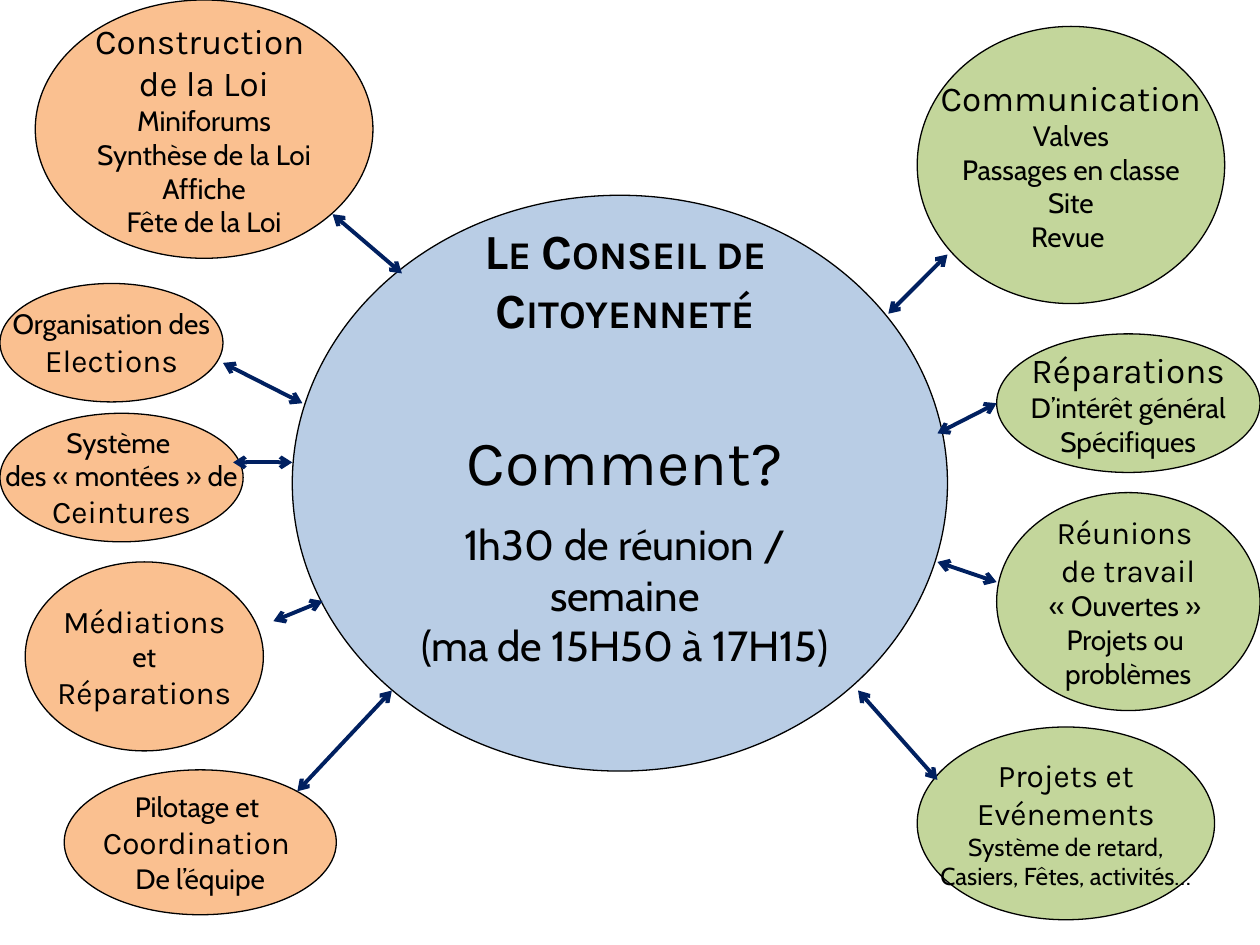
from lxml import etree
from pptx import Presentation
from pptx import util as u
from pptx.dml.color import RGBColor
from pptx.enum import shapes, text
from pptx.oxml.ns import qn

WIDTH, HEIGHT = 10, 7.5
BLACK, NAVY = "000000", "002060"
ORANGE, GREEN, BLUE = "FAC090", "C3D69B", "B9CDE5"
FAR_LEFT, GREEN_LEFT, GREEN_INNER = 0, 7.28, 7.91
INNER_WIDTH = WIDTH - GREEN_INNER

# Text styles: font name and size in points
STYLES = {
    "title": ("Karla", 28), "question": ("Karla", 36), "answer": ("Cabin", 24),
    "large": ("Karla", 20), "head": ("Karla", 18),
    "body": ("Cabin", 16), "small": ("Cabin", 14),
}

# Content: (left, top, width, height), then (style, lines) groups
HUB = (2.32, 1.55, 5.2, 4.57)
MISSIONS = [
    ((0.28, 0, 2.68, 2.05), [
        ("large", ["Construction ", "de la Loi"]),
        ("body", ["Miniforums", "Synthèse de la Loi", "Affiche", "Fête de la Loi"])]),
    ((FAR_LEFT, 2.25, 1.77, 0.94), [
        ("body", ["Organisation des"]), ("head", ["Elections"])]),
    ((FAR_LEFT, 3.28, 1.93, 1.02), [
        ("body", ["Système ", "des « montées » de"]), ("head", ["Ceintures"])]),
    ((0.2, 4.46, 1.89, 1.5), [
        ("head", ["Médiations"]), ("body", ["et"]), ("head", ["Réparations"])]),
    ((0.51, 6.11, 2.16, 1.15), [
        ("body", ["Pilotage et "]), ("head", ["Coordination "]),
        ("body", ["De l’équipe"])]),
]
ACTIONS = [
    ((GREEN_LEFT, 0.21, 2.44, 2.2), [
        ("large", ["Communication"]),
        ("body", ["Valves", "Passages en classe", "Site", "Revue "])]),
    ((GREEN_INNER, 2.65, INNER_WIDTH, 1.1), [
        ("large", ["Réparations"]), ("body", ["D’intérêt général", "Spécifiques"])]),
    ((GREEN_INNER, 3.91, INNER_WIDTH, 1.73), [
        ("head", ["Réunions ", "de travail"]),
        ("body", ["« Ouvertes » ", "Projets ou ", "problèmes"])]),
    ((GREEN_LEFT, 5.77, 2.36, 1.53), [
        ("head", ["Projets et", "Evénements"]),
        ("small", ["Système de retard,", "Casiers, Fêtes, activités…"])]),
]
CENTRE = [
    ((3.35, 1.7, 3.23, 1.04), [("title", ["Le Conseil de Citoyenneté"])]),
    ((3.03, 3.3, 3.86, 1.68), [
        ("question", ["Comment?"]),
        ("answer", ["1h30 de réunion / semaine", "(ma de 15H50 à 17H15)"])]),
]
# Arrow ends: x and y at the start, x and y at the end
ARROWS = [
    (2.64, 1.7, 3.19, 2.17), (1.77, 2.88, 2.4, 3.2), (1.85, 3.67, 2.32, 3.67),
    (2.17, 4.93, 2.56, 4.77), (2.36, 6.28, 3.11, 5.48),
    (7.05, 2.49, 7.52, 2.02), (7.44, 3.44, 7.91, 3.2),
    (7.44, 4.46, 7.91, 4.62), (6.81, 5.48, 7.44, 6.19),
]


def colour(value):
    return RGBColor.from_string(value)


def inches(lengths):
    return [u.Inches(length) for length in lengths]


def write(frame, groups):
    lines = [(style, line) for style, group in groups for line in group]
    for index, (style, line) in enumerate(lines):
        para = frame.add_paragraph() if index else frame.paragraphs[0]
        para.alignment = text.PP_ALIGN.CENTER
        if index and lines[index - 1][0] == "question":
            para.space_before = u.Pt(12)
        span = para.add_run()
        span.text = line
        name, size = STYLES[style]
        formats = {"name": name, "size": u.Pt(size), "bold": style == "title"}
        for key, value in formats.items():
            setattr(span.font, key, value)
        span.font.color.rgb = colour(BLACK)
        if style == "title":
            span._r.get_or_add_rPr().set("cap", "small")


def add_ellipse(page, area, fill, groups=()):
    oval = page.shapes.add_shape(shapes.MSO_SHAPE.OVAL, *inches(area))
    oval.shadow.inherit = False
    oval.fill.solid()
    oval.fill.fore_color.rgb = colour(fill)
    oval.line.color.rgb = colour(BLACK)
    oval.line.width = u.Pt(0.75)
    oval.text_frame.word_wrap = False
    oval.text_frame.vertical_anchor = text.MSO_ANCHOR.MIDDLE
    write(oval.text_frame, groups)


def add_label(page, area, groups):
    box = page.shapes.add_textbox(*inches(area))
    box.text_frame.word_wrap = True
    box.text_frame.auto_size = text.MSO_AUTO_SIZE.SHAPE_TO_FIT_TEXT
    write(box.text_frame, groups)


def add_arrow(page, ends):
    arrow = page.shapes.add_connector(shapes.MSO_CONNECTOR.STRAIGHT, *inches(ends))
    arrow.line.color.rgb = colour(NAVY)
    arrow.line.width = u.Pt(2.25)
    outline = arrow.line._get_or_add_ln()
    for tag in ("a:headEnd", "a:tailEnd"):
        etree.SubElement(outline, qn(tag)).set("type", "arrow")
    etree.SubElement(arrow._element.spPr, qn("a:effectLst"))


def main():
    deck = Presentation()
    deck.slide_width, deck.slide_height = inches((WIDTH, HEIGHT))
    page = deck.slides.add_slide(deck.slide_layouts[6])

    # Central council and its labels
    add_ellipse(page, HUB, BLUE)
    for area, groups in CENTRE:
        add_label(page, area, groups)

    # Surrounding tasks
    for fill, tasks in ((ORANGE, MISSIONS), (GREEN, ACTIONS)):
        for area, groups in tasks:
            add_ellipse(page, area, fill, groups)

    # Two-way arrows
    for ends in ARROWS:
        add_arrow(page, ends)

    deck.save("out.pptx")


if __name__ == "__main__":
    main()
